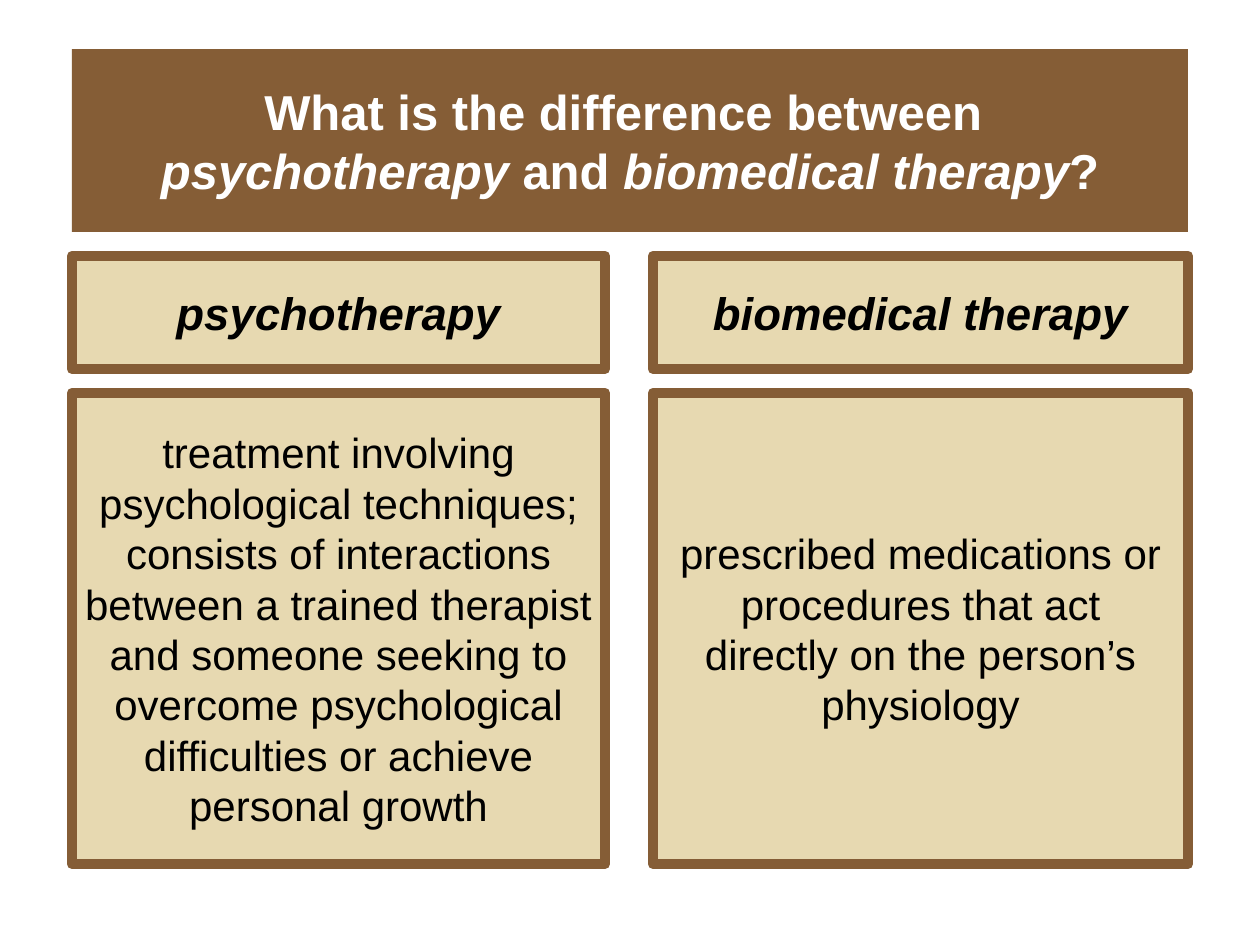
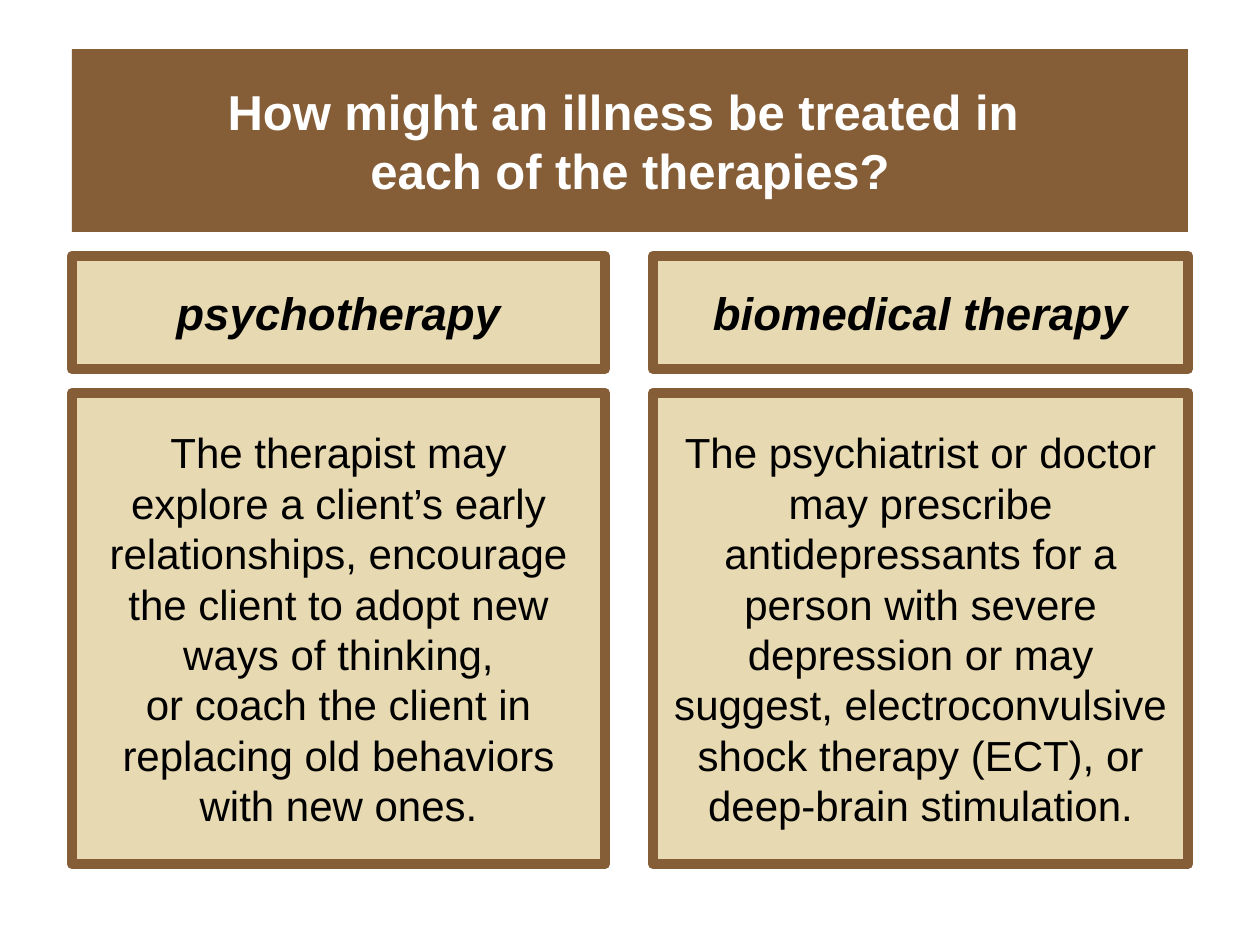
from dataclasses import dataclass

from pptx import Presentation
from pptx import util as u
from pptx.dml.color import RGBColor
from pptx.enum import shapes, text

# In titles, *asterisks* mark italic words and \n breaks the line.
THERAPIES = ["psychotherapy", "biomedical therapy"]
SLIDES = [
    {
        "title": "What is the difference between \n*psychotherapy* and *biomedical therapy*?",
        "answers": [
            ["treatment involving psychological techniques; consists of interactions",
             "between a trained therapist and someone seeking to overcome "
             "psychological difficulties or achieve personal growth"],
            ["prescribed medications or procedures that act",
             "directly on the person’s physiology"],
        ],
    },
    {
        "title": "How might an illness be treated in \neach of the therapies?",
        "answers": [
            ["The therapist may",
             "explore a client’s early relationships, encourage the client to "
             "adopt new ways of thinking,",
             "or coach the client in replacing old behaviors with new ones."],
            ["The psychiatrist or doctor may prescribe antidepressants for a "
             "person with severe depression or may suggest, electroconvulsive "
             "shock therapy (ECT), or deep-brain stimulation."],
        ],
    },
]


@dataclass(frozen=True)
class Theme:
    brown: str = "855D36"
    sand: str = "E7D9B1"
    white: str = "FFFFFF"
    black: str = "000000"
    font: str = "Arial"
    title_size: int = 28
    heading_size: int = 26
    answer_size: int = 24
    leading: float = 1.2
    border: int = 6


THEME = Theme()
PX_PER_INCH = 126
PAGE_SIZE = (1260, 945)
TITLE_BAND = (72, 49, 1116, 183)
COLUMNS = [(72, 533), (653, 535)]      # left, width
HEADING_ROW = (256, 113)               # top, height
ANSWER_ROW = (393, 471)


def px(length):
    return u.Emu(round(length * u.Inches(1) / PX_PER_INCH))


def write(box, paragraphs, *, size, color, bold=False, italic=False):
    """Fill a box with centred paragraphs; *asterisks* switch italics."""
    frame = box.text_frame
    frame.word_wrap = True
    frame.vertical_anchor = text.MSO_ANCHOR.MIDDLE
    for index, content in enumerate(paragraphs):
        para = frame.add_paragraph() if index else frame.paragraphs[0]
        para.alignment = text.PP_ALIGN.CENTER
        para.line_spacing = u.Pt(size * THEME.leading)
        for part, words in enumerate(content.split("*")):
            for row, line in enumerate(words.split("\n")):
                if row:
                    para.add_line_break()
                if not line:
                    continue
                span = para.add_run()
                span.text = line
                span.font.name = THEME.font
                span.font.size = u.Pt(size)
                span.font.bold = bold
                span.font.italic = italic or part % 2 == 1
                span.font.color.rgb = RGBColor.from_string(color)


def add_box(page, bounds, fill, border=None):
    box = page.shapes.add_shape(shapes.MSO_SHAPE.RECTANGLE, *map(px, bounds))
    box.shadow.inherit = False
    box.fill.solid()
    box.fill.fore_color.rgb = RGBColor.from_string(fill)
    if border:
        box.line.color.rgb = RGBColor.from_string(border)
        box.line.width = u.Pt(THEME.border)
    else:
        box.line.fill.background()
    return box


def add_comparison(deck, title, answers):
    page = deck.slides.add_slide(deck.slide_layouts[6])
    band = add_box(page, TITLE_BAND, THEME.brown)
    write(band, [title], size=THEME.title_size, color=THEME.white, bold=True)

    for (left, width), therapy, answer in zip(COLUMNS, THERAPIES, answers):
        heading_box, answer_box = (
            add_box(page, (left, top, width, height), THEME.sand, THEME.brown)
            for top, height in (HEADING_ROW, ANSWER_ROW)
        )
        write(heading_box, [therapy], size=THEME.heading_size,
              color=THEME.black, bold=True, italic=True)
        write(answer_box, answer, size=THEME.answer_size, color=THEME.black)


def main():
    deck = Presentation()
    deck.slide_width, deck.slide_height = map(px, PAGE_SIZE)
    for slide in SLIDES:
        add_comparison(deck, **slide)
    deck.save("out.pptx")


if __name__ == "__main__":
    main()
